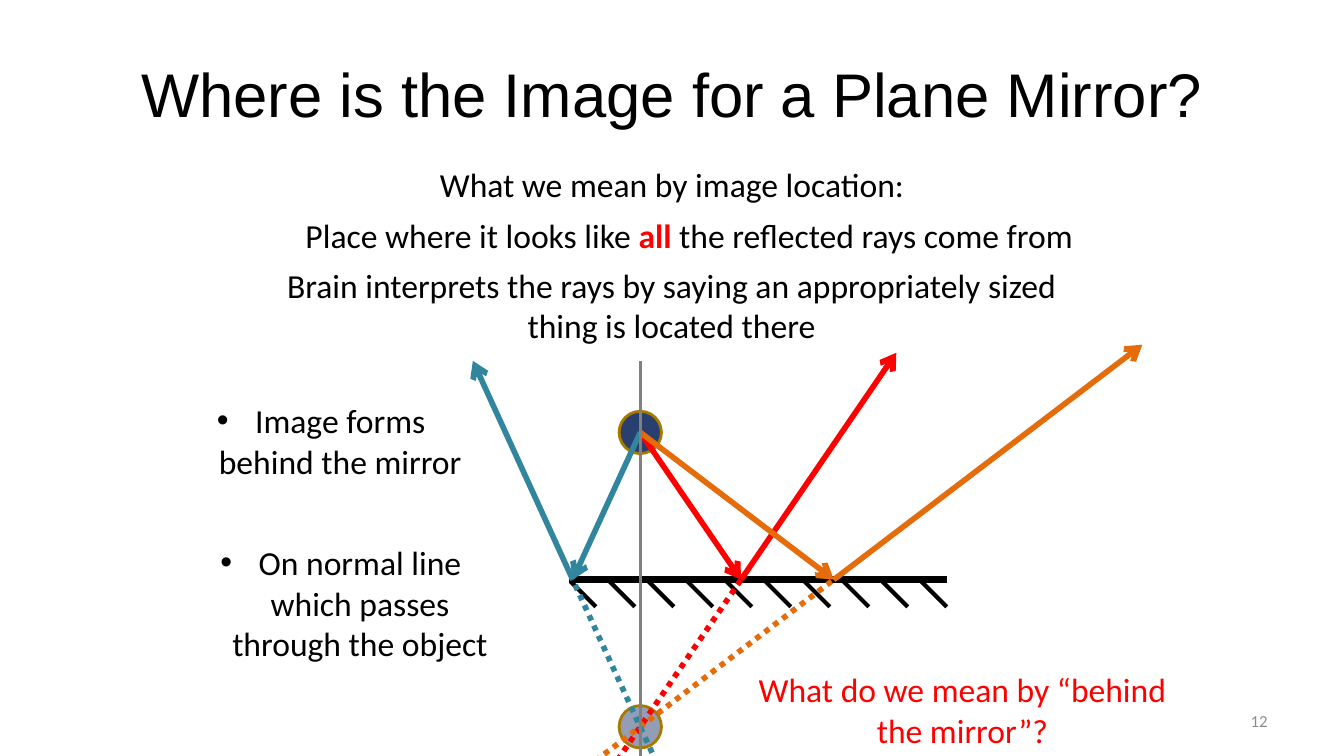
import pptx
import pptx.util
import pptx.dml.color
import pptx.enum.dml
import pptx.enum.shapes
import pptx.enum.text
import pptx.oxml
from pptx.util import Inches

ALIGN = pptx.enum.text.PP_ALIGN
DOTS = pptx.enum.dml.MSO_LINE.ROUND_DOT
MIDDLE = pptx.enum.text.MSO_ANCHOR.MIDDLE
NS = 'xmlns:a="http://schemas.openxmlformats.org/drawingml/2006/main"'


def color(code):
    return pptx.dml.color.RGBColor.from_string(code)


def put_line(start, end, code, width, dash=None, arrow=False):
    line = slide.shapes.add_connector(
        pptx.enum.shapes.MSO_CONNECTOR.STRAIGHT,
        *[Inches(v) for v in (*start, *end)])
    line.line.color.rgb = color(code)
    line.line.width = pptx.util.Pt(width)
    if dash:
        line.line.dash_style = dash
    if arrow:
        line.line._get_or_add_ln().append(
            pptx.oxml.parse_xml(f'<a:tailEnd {NS} type="arrow"/>'))
    line._element.spPr.append(pptx.oxml.parse_xml(f'<a:effectLst {NS}/>'))


deck = pptx.Presentation()
deck.slide_width = Inches(13.33)
deck.slide_height = Inches(7.5)
slide = deck.slides.add_slide(deck.slide_layouts[6])

# Mirror: surface with hatching below
top = 5.75
put_line((5.64, top), (9.39, top), "000000", 5)
for i in range(10):
    x = 5.66 + i * 3.48 / 9
    put_line((x, 5.77), (x + 0.25, 6.02), "000000", 3)

# Object above the mirror, half-clear image below it
for y, alpha in [(4.08, 100), (7, 50)]:
    ball = slide.shapes.add_shape(
        pptx.enum.shapes.MSO_SHAPE.OVAL,
        Inches(6.14), Inches(y), Inches(0.42), Inches(0.42))
    ball.shadow.inherit = False
    ball.fill.solid()
    ball.fill.fore_color.rgb = color("293F6F")
    if alpha < 100:
        ball.fill._xPr.solidFill[0].append(
            pptx.oxml.parse_xml(f'<a:alpha {NS} val="{alpha * 1000}"/>'))
    ball.line.color.rgb = color("A67A00")
    ball.line.width = pptx.util.Pt(2)

# Rays: object to mirror, mirror to eye, dotted extension behind
rays = [
    ("FF0000", 7.35, (8.89, 3.5), (5.81, 8)),
    ("E46C0A", 8.27, (11.33, 3.42), (5.64, 7.75)),
    ("31859C", 5.68, (4.69, 3.58), (6.56, 7.67)),
]
for code, x, eye, back in rays:
    put_line((6.35, 4.29), (x, top), code, 4, arrow=True)
    put_line((x, top), eye, code, 4, arrow=True)
    put_line(back, (x, top), code, 4, dash=DOTS)

# Normal line through the object
put_line((6.35, 3.58), (6.35, 7.5), "808080", 2)

# Texts: box, size, font, color, bullet, runs
texts = [
    ((0.67, 0.3, 12, 1.25), 44, "Arial", "000000", False,
     ["Where is the Image for a Plane Mirror?"]),
    ((2.25, 1.58, 8.83, 0.51), 24, "Calibri", "000000", False,
     ["What we mean by image location:"]),
    ((2.42, 2.08, 8.83, 0.51), 24, "Calibri", "000000", False,
     ["Place where it looks like ", "all", " the reflected rays come from"]),
    ((2.62, 2.58, 8.08, 0.91), 24, "Calibri", "000000", False,
     ["Brain interprets the rays by saying an appropriately sized "
      "thing is located there"]),
    ((1.67, 3.92, 3.03, 0.91), 24, "Calibri", "000000", True,
     ["Image forms behind the mirror"]),
    ((1.67, 5.33, 3.42, 1.31), 24, "Calibri", "000000", True,
     ["On normal line which passes through the object"]),
    ((7.42, 6.59, 4.25, 0.91), 24, "Calibri", "FF0000", False,
     ["What do we mean by “behind the mirror”?"]),
    ((9.56, 6.95, 3.11, 0.4), 12, "Calibri", "8C8C8C", False, ["12"]),
]
for place, size, font, code, bullet, parts in texts:
    frame = slide.shapes.add_textbox(*[Inches(v) for v in place]).text_frame
    frame.word_wrap = True
    if size != 24:
        frame.vertical_anchor = MIDDLE
    para = frame.paragraphs[0]
    para.alignment = ALIGN.RIGHT if size == 12 else ALIGN.CENTER
    if bullet:
        props = para._p.get_or_add_pPr()
        props.set("marL", str(Inches(0.38)))
        props.set("indent", str(-Inches(0.38)))
        for tag in ('buFont {} typeface="Arial"', 'buChar {} char="•"'):
            props.append(pptx.oxml.parse_xml(f"<a:{tag.format(NS)}/>"))
    for part in parts:
        run = para.add_run()
        run.text = part
        run.font.name = font
        run.font.size = pptx.util.Pt(size)
        run.font.bold = part == "all"
        run.font.color.rgb = color("FF0000" if part == "all" else code)

deck.save("out.pptx")
